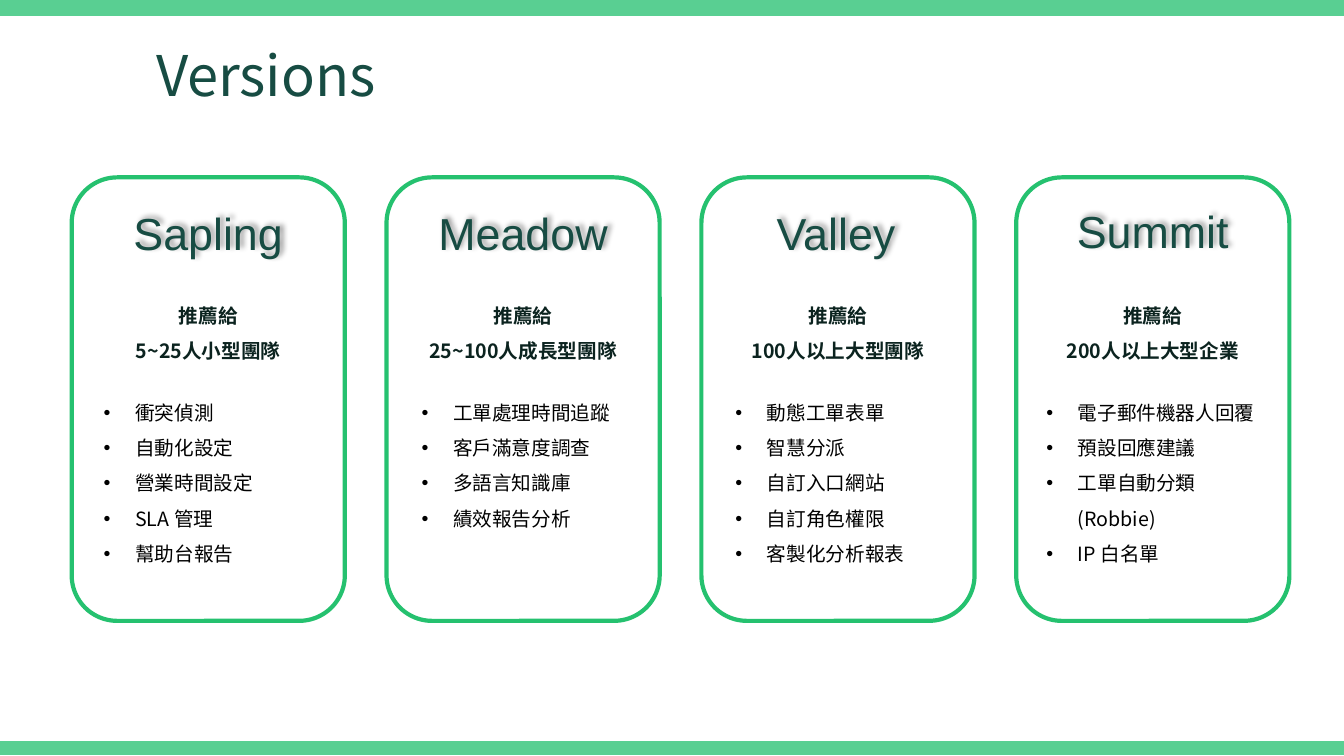
from lxml.etree import SubElement
from pptx import Presentation
from pptx.dml.color import RGBColor
from pptx.enum.shapes import MSO_SHAPE
from pptx.enum.text import MSO_ANCHOR, MSO_AUTO_SIZE, PP_ALIGN
from pptx.oxml.ns import qn
from pptx.util import Pt

COLORS = {"bar": "59CF92", "border": "25C16F", "heading": "174C43",
          "audience": "0B231F", "feature": "000000", "shadow": "000000"}
CJK = "Noto Sans CJK SC"
FORMATS = {
    "title": {"font": {"size": Pt(40), "name": CJK}, "color": "heading",
              "paragraph": {"line_spacing": 0.9}},
    "plan": {"font": {"size": Pt(32), "name": "Arial"}, "color": "heading",
             "paragraph": {"alignment": PP_ALIGN.CENTER}},
    "audience": {"font": {"size": Pt(14), "name": CJK, "bold": True}, "color": "audience",
                 "paragraph": {"alignment": PP_ALIGN.CENTER, "line_spacing": 1.5}},
    "feature": {"font": {"size": Pt(14), "name": CJK}, "color": "feature",
                "paragraph": {"line_spacing": 1.5}},
}
SLIDE_W, SLIDE_H = 960, 540
CARD_LEFT, CARD_TOP, CARD_W, CARD_H, CARD_PITCH = 51.2, 126.7, 195.1, 316.8, 224.9
INDENT = 22.5

# plan, plan name shift (x, y), audience, left of the features, features
PLANS = [
    ("Sapling", (0, 0), "5~25人小型團隊", 15.8,
     ["衝突偵測", "自動化設定", "營業時間設定", "SLA 管理", "幫助台報告"]),
    ("Meadow", (0, 0), "25~100人成長型團隊", 18,
     ["工單處理時間追蹤", "客戶滿意度調查", "多語言知識庫", "績效報告分析"]),
    ("Valley", (-1.4, 0), "100人以上大型團隊", 17.3,
     ["動態工單表單", "智慧分派", "自訂入口網站", "自訂角色權限", "客製化分析報表"]),
    ("Summit", (0, -1.4), "200人以上大型企業", 14.4,
     ["電子郵件機器人回覆", "預設回應建議", "工單自動分類 (Robbie)", "IP 白名單"]),
]


def color(name):
    return RGBColor.from_string(COLORS[name])


def add_outline(slide, preset, box, line, width, fill=None):
    """Add a preset shape with a coloured line and, if named, a fill."""
    shape = slide.shapes.add_shape(preset, *map(Pt, box))
    shape.shadow.inherit = False
    if fill:
        shape.fill.solid()
        shape.fill.fore_color.rgb = color(fill)
    else:
        shape.fill.background()
    shape.line.color.rgb = color(line)
    shape.line.width = Pt(width)


def add_lines(slide, box, lines, style):
    """Add a text box with one paragraph a line, formatted by style."""
    look = FORMATS[style]
    holder = slide.shapes.add_textbox(*map(Pt, box))
    frame = holder.text_frame
    frame.word_wrap = True
    for number, line in enumerate(lines):
        paragraph = frame.add_paragraph() if number else frame.paragraphs[0]
        for key, value in look["paragraph"].items():
            setattr(paragraph, key, value)
        run = paragraph.add_run()
        run.text = line
        for key, value in look["font"].items():
            setattr(run.font, key, value)
        run.font.color.rgb = color(look["color"])
        SubElement(run.font._element, qn("a:ea"), typeface=look["font"]["name"])
    return holder


def add_bullets(frame):
    for paragraph in frame.paragraphs:
        properties = paragraph._p.get_or_add_pPr()
        properties.set("marL", str(Pt(INDENT)))
        properties.set("indent", str(-Pt(INDENT)))
        SubElement(properties, qn("a:buFont"), typeface="Arial")
        SubElement(properties, qn("a:buChar"), char="•")


def add_soft_shadow(holder):
    """Cast a blurred shadow up and to the right of the text."""
    effects = SubElement(holder._element.spPr, qn("a:effectLst"))
    shadow = SubElement(effects, qn("a:outerShdw"), blurRad=str(Pt(4)), dist=str(Pt(3)),
                        dir="18900000", algn="bl", rotWithShape="0")
    tint = SubElement(shadow, qn("a:srgbClr"), val=COLORS["shadow"])
    SubElement(tint, qn("a:alpha"), val="40000")


def add_frame_bars(slide):
    for top, height in ((0, 10.8), (529.6, 8.9)):
        add_outline(slide, MSO_SHAPE.RECTANGLE, (0, top, SLIDE_W, height), "bar", 1, "bar")


def add_title(slide, box):
    title = add_lines(slide, box, ["Versions"], "title")
    title.text_frame.vertical_anchor = MSO_ANCHOR.MIDDLE


def add_plan_card(slide, box, plan, shift, audience, features_left, features):
    left, top, width, height = box
    add_outline(slide, MSO_SHAPE.ROUNDED_RECTANGLE, box, "border", 3)
    name = add_lines(slide, (left + shift[0], top + 16.6 + shift[1], width, 46),
                     [plan], "plan")
    add_soft_shadow(name)
    recommended = add_lines(slide, (left + 18, top + 78.5, width - 36, 55),
                            ["推薦給", audience], "audience")
    feature_list = add_lines(slide, (left + features_left, top + 147.6, 166, 134.6),
                             features, "feature")
    add_bullets(feature_list.text_frame)
    for holder in (name, recommended, feature_list):
        holder.text_frame.auto_size = MSO_AUTO_SIZE.SHAPE_TO_FIT_TEXT


def main():
    deck = Presentation()
    deck.slide_width, deck.slide_height = Pt(SLIDE_W), Pt(SLIDE_H)
    slide = deck.slides.add_slide(deck.slide_layouts[6])
    add_frame_bars(slide)
    add_title(slide, (104.4, 3.6, 875.5, 104.4))
    for column, plan in enumerate(PLANS):
        box = (CARD_LEFT + column * CARD_PITCH, CARD_TOP, CARD_W, CARD_H)
        add_plan_card(slide, box, *plan)
    deck.save("out.pptx")


if __name__ == "__main__":
    main()
